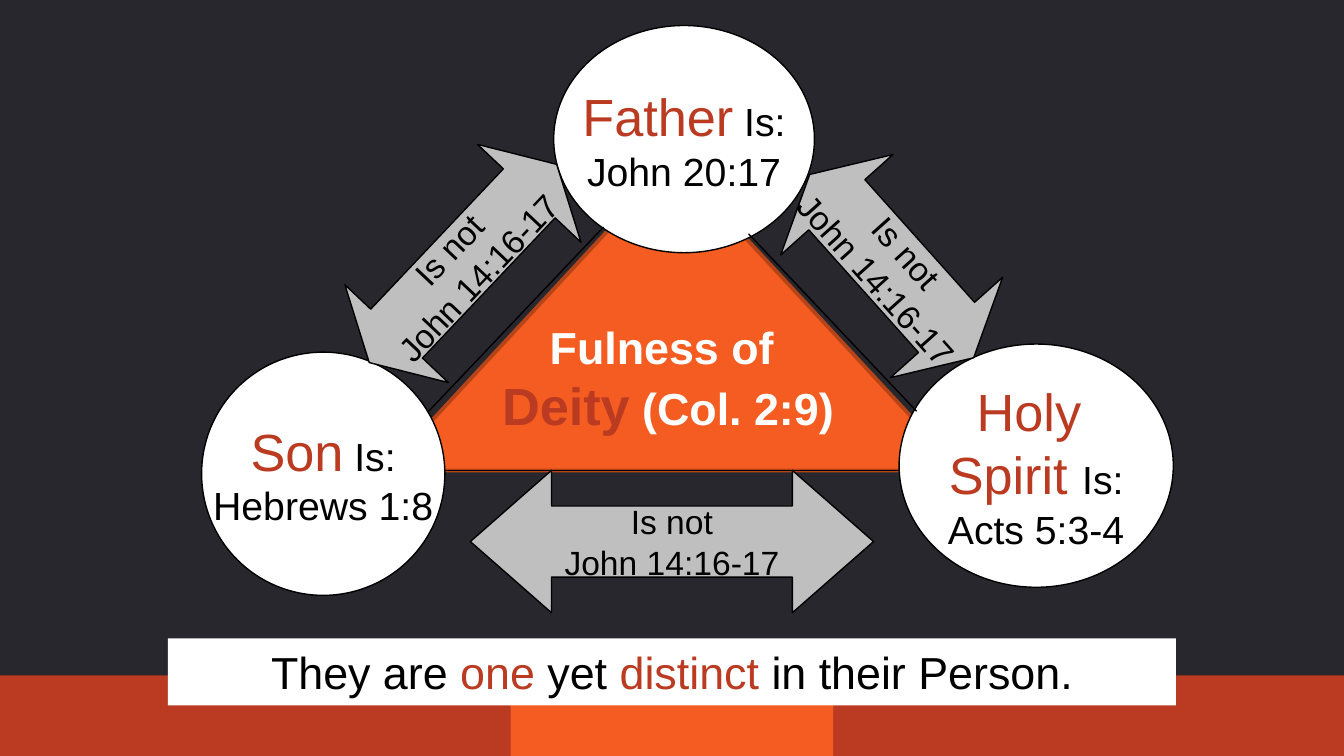
"""Build a slide relating Father, Son and Holy Spirit around a central triangle."""
import lxml.etree
import pptx
import pptx.dml.color
import pptx.enum.shapes
import pptx.enum.text
import pptx.oxml.ns
import pptx.util

SHAPE = pptx.enum.shapes.MSO_SHAPE
WIDTH = 10
HEIGHT = WIDTH * 9 / 16
THEME = {
    "font": "Arial",
    "background": "27272D", "rust": "BA3B21", "orange": "F55C21", "edge": "B54418",
    "white": "FFFFFF", "black": "000000", "gray": "BFBFBF",
    "thin": 0.75, "thick": 2,
    "text": {
        "name": (28, "rust", False), "verse": (21, "black", False),
        "relation": (18, "black", False),
        "center": (24, "white", True), "deity": (28, "rust", True),
        "plain": (24, "black", False), "accent": (24, "rust", False),
    },
}

BAND = 0.6
FOOTER_BANDS = [((0, HEIGHT - BAND, WIDTH, BAND), "rust"),
                ((3.8, HEIGHT - BAND, 2.4, BAND), "orange")]
TRIANGLE = (2.87, 1.19, 4.28, 2.31)
PERSONS = [
    ((4.12, 0.19, 1.94, 1.69),
     [[("Father", "name"), (" Is:", "verse")], [("John 20:17", "verse")]]),
    ((1.5, 2.62, 1.81, 1.81),
     [[("Son", "name"), (" Is:", "verse")], [("Hebrews 1:8", "verse")]]),
    ((6.69, 2.56, 2.04, 1.81),
     [[("Holy ", "name")], [("Spirit ", "name"), ("Is:", "verse")],
      [("Acts 5:3-4", "verse")]]),
]
CENTER_BOX = (3.62, 2.33, 2.7, 0.98)
CENTER = [[("Fulness of \n", "center"), ("Deity", "deity"), (" (Col. 2:9)", "center")]]
SIDES = [(3.19, 3.06, 4.49, 1.69), (5.57, 1.74, 6.82, 3.06), (3.31, 3.5, 6.69, 3.5)]
RELATION = [[("Is not", "relation")], [("John 14:16-17", "relation")]]
ARROWS = [
    ((2.43, 1.43, 2.03, 1.06), 313.4, 0.28),
    ((5.72, 1.42, 1.83, 1.12), 48.2, 0.27),
    ((3.5, 3.5, 3, 1.06), 0, 0.57),
]
BANNER_BOX = (WIDTH / 8, 4.75, WIDTH * 3 / 4, 0.5)
BANNER = [[("They are ", "plain"), ("one", "accent"), (" yet ", "plain"),
           ("distinct", "accent"), (" in their Person.", "plain")]]


def color(name):
    return pptx.dml.color.RGBColor.from_string(THEME[name])


def inches(lengths):
    return [pptx.util.Inches(length) for length in lengths]


def set_line(line, name, width):
    line.color.rgb = color(name)
    line.width = pptx.util.Pt(width)


def add_shape(slide, kind, box, fill, edge=None, width=THEME["thin"]):
    shape = slide.shapes.add_shape(kind, *inches(box))
    shape.shadow.inherit = False
    shape.fill.solid()
    shape.fill.fore_color.rgb = color(fill)
    if edge:
        set_line(shape.line, edge, width)
    else:
        shape.line.fill.background()
    return shape


def write(shape, paragraphs, wrap=False, anchor=pptx.enum.text.MSO_ANCHOR.MIDDLE):
    frame = shape.text_frame
    frame.word_wrap = wrap
    frame.vertical_anchor = anchor
    for index, parts in enumerate(paragraphs):
        paragraph = frame.add_paragraph() if index else frame.paragraphs[0]
        paragraph.alignment = pptx.enum.text.PP_ALIGN.CENTER
        for text, style in parts:
            size, name, bold = THEME["text"][style]
            run = paragraph.add_run()
            run.text = text.rstrip("\n")
            run.font.name = THEME["font"]
            run.font.size = pptx.util.Pt(size)
            run.font.bold = bold
            run.font.color.rgb = color(name)
            if text.endswith("\n"):
                paragraph.add_line_break()


def add_side(slide, ends):
    straight = pptx.enum.shapes.MSO_CONNECTOR.STRAIGHT
    connector = slide.shapes.add_connector(straight, *inches(ends))
    set_line(connector.line, "black", THEME["thin"])
    properties = connector._element.spPr
    lxml.etree.SubElement(properties, pptx.oxml.ns.qn("a:effectLst"))


def main():
    presentation = pptx.Presentation()
    presentation.slide_width, presentation.slide_height = inches((WIDTH, HEIGHT))
    slide = presentation.slides.add_slide(presentation.slide_layouts[6])
    slide.background.fill.solid()
    slide.background.fill.fore_color.rgb = color("background")

    for box, fill in FOOTER_BANDS:
        add_shape(slide, SHAPE.RECTANGLE, box, fill)
    add_shape(slide, SHAPE.ISOSCELES_TRIANGLE, TRIANGLE, "orange", "edge", THEME["thick"])
    for box, paragraphs in PERSONS:
        write(add_shape(slide, SHAPE.OVAL, box, "white", "black"), paragraphs)

    top = pptx.enum.text.MSO_ANCHOR.TOP
    write(slide.shapes.add_textbox(*inches(CENTER_BOX)), CENTER, anchor=top)
    for ends in SIDES:
        add_side(slide, ends)
    for box, rotation, head in ARROWS:
        arrow = add_shape(slide, SHAPE.LEFT_RIGHT_ARROW, box, "gray", "black")
        arrow.rotation = rotation
        arrow.adjustments[1] = head
        write(arrow, RELATION)
    banner = add_shape(slide, SHAPE.RECTANGLE, BANNER_BOX, "white")
    write(banner, BANNER, wrap=True, anchor=top)
    presentation.save("out.pptx")


if __name__ == "__main__":
    main()
